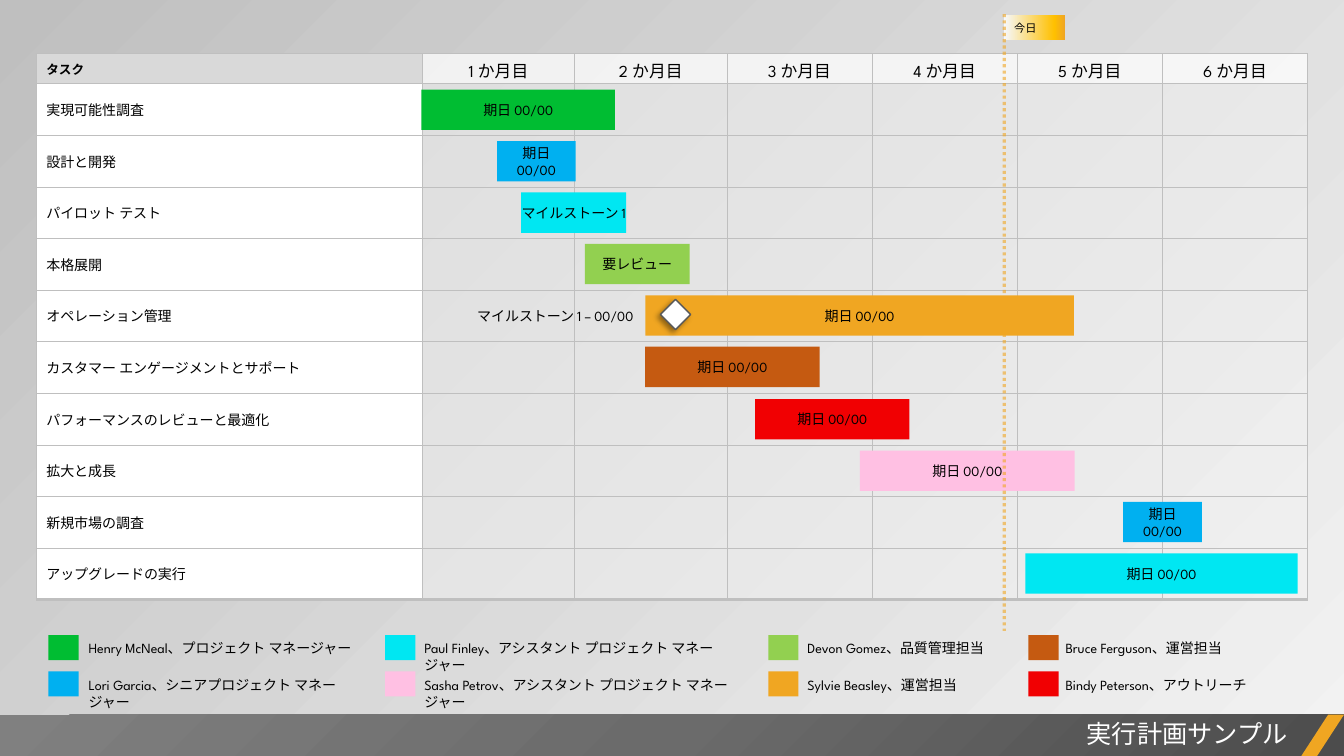
"""Build a one-slide project plan with a Gantt table, a legend and a today marker."""
from dataclasses import dataclass

from pptx import Presentation
from pptx.dml.color import RGBColor
from pptx.enum.dml import MSO_LINE
from pptx.enum.lang import MSO_LANGUAGE_ID
from pptx.enum.shapes import MSO_CONNECTOR, MSO_SHAPE
from pptx.enum.text import MSO_ANCHOR, MSO_AUTO_SIZE, PP_ALIGN
from pptx.oxml import parse_xml
from pptx.oxml.ns import nsdecls, qn
from pptx.util import Emu, Pt

EMU_PER_PX = 9144
LEFT, CENTER, RIGHT = PP_ALIGN.LEFT, PP_ALIGN.CENTER, PP_ALIGN.RIGHT
TOP, MIDDLE = MSO_ANCHOR.TOP, MSO_ANCHOR.MIDDLE
RECTANGLE, DIAMOND = MSO_SHAPE.RECTANGLE, MSO_SHAPE.DIAMOND
PARALLELOGRAM, STRAIGHT = MSO_SHAPE.PARALLELOGRAM, MSO_CONNECTOR.STRAIGHT
GROW, DOTTED = MSO_AUTO_SIZE.SHAPE_TO_FIT_TEXT, MSO_LINE.ROUND_DOT
JAPANESE = MSO_LANGUAGE_ID.JAPANESE


@dataclass(frozen=True)
class Theme:
    font: str = "League Spartan"
    black: str = "000000"
    white: str = "FFFFFF"
    pale: str = "F2F2F2"
    header: str = "D9D9D9"
    grid: str = "BFBFBF"
    outline: str = "595959"
    green: str = "00BD32"
    blue: str = "00B0F0"
    cyan: str = "00E7F2"
    lime: str = "92D050"
    amber: str = "F0A622"
    brown: str = "C55A11"
    red: str = "F10002"
    pink: str = "FFC0E3"
    title_size: int = 18
    month_size: int = 12
    body_size: int = 10
    header_size: int = 9
    flag_size: int = 8


THEME = Theme()


@dataclass(frozen=True)
class Task:
    name: str
    left: int
    width: int
    color: str
    label: str = "期日 00/00"
    side_inset: int = 10


@dataclass(frozen=True)
class LegendColumn:
    swatch_left: int
    text_left: int
    width: int
    entries: tuple[tuple[str, str], ...]


TASKS = (
    Task("実現可能性調査", 418, 192, THEME.green),
    Task("設計と開発", 493, 78, THEME.blue),
    Task("パイロット テスト", 517, 104, THEME.cyan, "マイルストーン 1", 0),
    Task("本格展開", 580, 104, THEME.lime, "要レビュー"),
    Task("オペレーション管理", 640, 425, THEME.amber),
    Task("カスタマー エンゲージメントとサポート", 640, 173, THEME.brown),
    Task("パフォーマンスのレビューと最適化", 749, 153, THEME.red),
    Task("拡大と成長", 853, 213, THEME.pink),
    Task("新規市場の調査", 1114, 78, THEME.blue),
    Task("アップグレードの実行", 1017, 270, THEME.cyan),
)
LEGEND = (
    LegendColumn(48, 78, 291, (
        (THEME.green, "Henry McNeal、プロジェクト マネージャー"),
        (THEME.blue, "Lori Garcia、シニアプロジェクト マネージャー"))),
    LegendColumn(382, 411, 345, (
        (THEME.cyan, "Paul Finley、アシスタント プロジェクト マネージャー"),
        (THEME.pink, "Sasha Petrov、アシスタント プロジェクト マネージャー"))),
    LegendColumn(762, 791, 240, (
        (THEME.lime, "Devon Gomez、品質管理担当"),
        (THEME.amber, "Sylvie Beasley、運営担当"))),
    LegendColumn(1020, 1047, 240, (
        (THEME.brown, "Bruce Ferguson、運営担当"),
        (THEME.red, "Bindy Peterson、アウトリーチ"))),
)
COLUMN_WIDTHS = (383, 151, 151, 144, 144, 144, 144)


def px(value: float) -> Emu:
    return Emu(round(value * EMU_PER_PX))


def write_text(frame, text: str, *, size: int = THEME.body_size, color: str = THEME.black,
               bold: bool = False, align=LEFT) -> None:
    paragraph = frame.paragraphs[0]
    paragraph.alignment = align
    run = paragraph.add_run()
    run.text = text
    run.font.name = THEME.font
    run.font.size = Pt(size)
    run.font.bold = bold
    run.font.color.rgb = RGBColor.from_string(color)
    run.font.language_id = JAPANESE


def set_alpha(properties, percent: int) -> None:
    color = next(properties.iter(qn("a:srgbClr")))
    color.append(parse_xml(f'<a:alpha {nsdecls("a")} val="{percent * 1000}"/>'))


def set_gradient(properties, stops: tuple[tuple[int, str, int], ...], direction: str) -> None:
    stop_xml = "".join(
        f'<a:gs pos="{position * 1000}"><a:srgbClr val="{color}">'
        f'<a:alpha val="{alpha * 1000}"/></a:srgbClr></a:gs>'
        for position, color, alpha in stops)
    gradient = parse_xml(f'<a:gradFill {nsdecls("a")} rotWithShape="1">'
                         f'<a:gsLst>{stop_xml}</a:gsLst>{direction}</a:gradFill>')
    properties.replace(properties.find(qn("a:solidFill")), gradient)


def add_block(shapes, kind, left: int, top: int, width: int, height: int, color: str):
    shape = shapes.add_shape(kind, px(left), px(top), px(width), px(height))
    shape.shadow.inherit = False
    shape.fill.solid()
    shape.fill.fore_color.rgb = RGBColor.from_string(color)
    shape.line.fill.background()
    shape.text_frame.word_wrap = True
    shape.text_frame.vertical_anchor = MIDDLE
    return shape


def add_label(shapes, left: int, top: int, width: int, height: int):
    frame = shapes.add_textbox(px(left), px(top), px(width), px(height)).text_frame
    frame.word_wrap = True
    return frame


def format_cell(cell, color: str, alpha: int, bottom_points: float) -> None:
    cell.vertical_anchor = MIDDLE
    cell.fill.solid()
    cell.fill.fore_color.rgb = RGBColor.from_string(color)
    properties = cell._tc.tcPr
    set_alpha(properties, alpha)
    borders = (("lnL", 0.5), ("lnR", 0.5), ("lnT", 0.5), ("lnB", bottom_points))
    for index, (side, points) in enumerate(borders):
        properties.insert(index, parse_xml(
            f'<a:{side} {nsdecls("a")} w="{Pt(points)}"><a:solidFill>'
            f'<a:srgbClr val="{THEME.grid}"/></a:solidFill></a:{side}>'))


def draw_footer(slide) -> None:
    bar = add_block(slide.shapes, RECTANGLE, 0, 709, 1333, 42, THEME.outline)
    set_gradient(bar._element.spPr, ((0, "4C4C4C", 100), (50, "6B6B6B", 100), (100, "808080", 100)),
                 '<a:path path="circle"><a:fillToRect l="100000" t="100000"/></a:path>')
    accent = add_block(slide.shapes, PARALLELOGRAM, 1290, 709, 43, 42, THEME.amber)
    accent.adjustments[0] = 0.65
    title = slide.shapes.title
    title.left, title.top, title.width, title.height = px(525), px(708), px(762), px(40)
    title.text_frame.word_wrap = True
    title.text_frame.auto_size = GROW
    title.text_frame.vertical_anchor = TOP
    write_text(title.text_frame, "実行計画サンプル", size=THEME.title_size,
               color=THEME.white, align=RIGHT)
    slide.shapes._spTree.append(title._element)


def draw_table(slide) -> None:
    table = slide.shapes.add_table(len(TASKS) + 1, len(COLUMN_WIDTHS), px(36), px(53),
                                   px(sum(COLUMN_WIDTHS)), px(539)).table
    table.horz_banding = False
    for column, width in zip(table.columns, COLUMN_WIDTHS):
        column.width = px(width)
    for index, row in enumerate(table.rows):
        row.height = px(51.2 if index else 27)
        bottom_points = 3 if index == len(TASKS) else 0.5
        for month, cell in enumerate(row.cells):
            if month == 0:
                format_cell(cell, THEME.white if index else THEME.header, 100, bottom_points)
            else:
                format_cell(cell, THEME.pale if index else THEME.white,
                            50 if index else 75, bottom_points)
    write_text(table.cell(0, 0).text_frame, "タスク", size=THEME.header_size, bold=True)
    for month in range(1, len(COLUMN_WIDTHS)):
        write_text(table.cell(0, month).text_frame, f"{month} か月目",
                   size=THEME.month_size, align=CENTER)
    for index, task in enumerate(TASKS, 1):
        write_text(table.cell(index, 0).text_frame, task.name)


def draw_bars(slide) -> None:
    for index, task in enumerate(TASKS):
        bar = add_block(slide.shapes, RECTANGLE, task.left, round(89 + 51.1 * index),
                        task.width, 40, task.color)
        bar.text_frame.margin_left = bar.text_frame.margin_right = px(task.side_inset)
        write_text(bar.text_frame, task.label, align=CENTER)


def draw_legend(slide) -> None:
    for column in LEGEND:
        for index, (color, text) in enumerate(column.entries):
            top = 630 + 36 * index
            add_block(slide.shapes, RECTANGLE, column.swatch_left, top, 30, 25, color)
            frame = add_label(slide.shapes, column.text_left, top, column.width, 27)
            frame.auto_size = GROW
            write_text(frame, text)


def draw_today(slide) -> None:
    shapes = slide.shapes.add_group_shape().shapes
    flag = add_block(shapes, RECTANGLE, 996, 15, 60, 25, THEME.amber)
    set_gradient(flag._element.spPr, ((0, "F6F8FC", 100), (83, "FFC000", 100),
                                      (100, THEME.amber, 100)), '<a:lin ang="0"/>')
    write_text(flag.text_frame, "今日", size=THEME.flag_size)
    line = shapes.add_connector(STRAIGHT, px(996), px(14), px(996), px(626))
    line.line.color.rgb = RGBColor.from_string(THEME.amber)
    line.line.width = Pt(2.25)
    line.line.dash_style = DOTTED
    set_alpha(line._element.spPr, 60)
    line._element.spPr.append(parse_xml(f'<a:effectLst {nsdecls("a")}/>'))


def draw_milestone(slide) -> None:
    diamond = add_block(slide.shapes, DIAMOND, 655, 297, 30, 30, THEME.white)
    diamond.line.color.rgb = RGBColor.from_string(THEME.outline)
    diamond.line.width = Pt(1)
    diamond._element.spPr.find(qn("a:effectLst")).append(parse_xml(
        f'<a:outerShdw {nsdecls("a")} blurRad="{Pt(4)}" dist="{Pt(3)}" dir="8100000">'
        f'<a:srgbClr val="{THEME.black}"><a:alpha val="40000"/></a:srgbClr></a:outerShdw>'))
    frame = add_label(slide.shapes, 421, 293, 217, 40)
    frame.vertical_anchor = MIDDLE
    write_text(frame, "マイルストーン 1 – 00/00", align=RIGHT)


def main() -> None:
    presentation = Presentation()
    presentation.slide_width, presentation.slide_height = px(1333), px(750)
    slide = presentation.slides.add_slide(presentation.slide_layouts[5])
    slide.background.fill.solid()
    slide.background.fill.fore_color.rgb = RGBColor.from_string(THEME.grid)
    set_gradient(next(slide._element.iter(qn("p:bgPr"))),
                 ((0, THEME.pale, 40), (100, THEME.grid, 100)), '<a:lin ang="13500000"/>')
    for draw in (draw_footer, draw_table, draw_bars, draw_legend, draw_today, draw_milestone):
        draw(slide)
    presentation.save("out.pptx")


if __name__ == "__main__":
    main()
